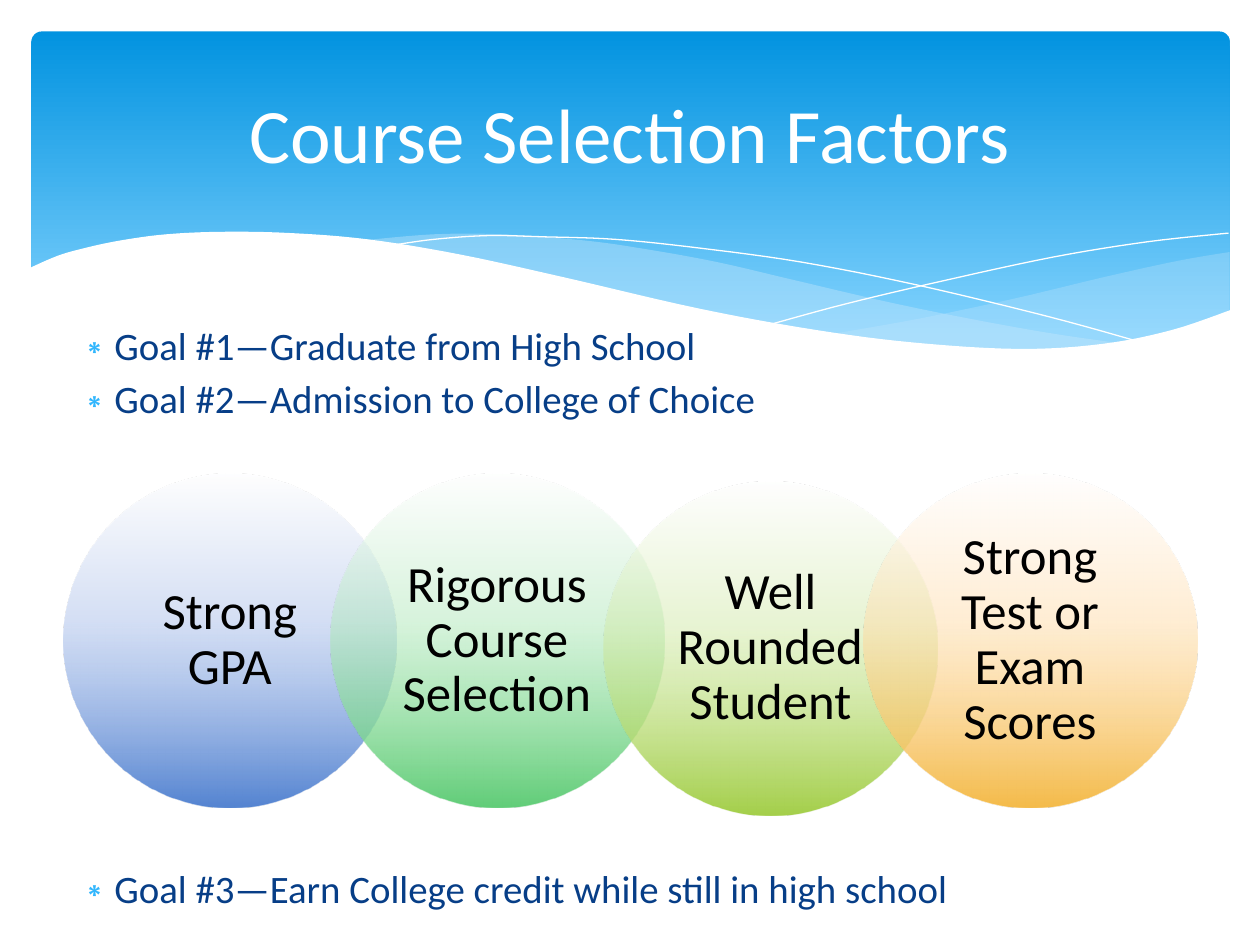
from lxml import etree
from pptx import Presentation
from pptx.dml.color import RGBColor
from pptx.enum.shapes import MSO_SHAPE
from pptx.enum.text import MSO_ANCHOR, MSO_AUTO_SIZE, PP_ALIGN
from pptx.oxml.ns import qn
from pptx.util import Pt

PX = 9144
FONT = "Calibri"
MIDDLE, TOP = MSO_ANCHOR.MIDDLE, MSO_ANCHOR.TOP
CENTER, LEFT = PP_ALIGN.CENTER, PP_ALIGN.LEFT
NO_AUTOFIT = MSO_AUTO_SIZE.NONE
ROUNDED, ELLIPSE = MSO_SHAPE.ROUNDED_RECTANGLE, MSO_SHAPE.OVAL

WHITE = RGBColor(0xFF, 0xFF, 0xFF)
BLACK = RGBColor(0x00, 0x00, 0x00)
NAVY = RGBColor(0x07, 0x3E, 0x87)
SKY = RGBColor(0x31, 0xB6, 0xFD)
HEADER_TOP = RGBColor(0x02, 0x93, 0xE0)
HEADER_BOTTOM = RGBColor(0x83, 0xD3, 0xFE)
MIST = RGBColor(0xC6, 0xE7, 0xFC)
PALE_BLUE, BLUE = RGBColor(0xAB, 0xC0, 0xEB), RGBColor(0x54, 0x84, 0xD1)
PALE_GREEN, GREEN = RGBColor(0xB1, 0xE9, 0xBB), RGBColor(0x61, 0xCD, 0x78)
PALE_LIME, LIME = RGBColor(0xD1, 0xEA, 0xA7), RGBColor(0xA4, 0xCF, 0x4A)
PALE_AMBER, AMBER = RGBColor(0xFF, 0xDD, 0xAA), RGBColor(0xF4, 0xBB, 0x4A)

RIGHT_WAVE = [
    [(976, 200), (935, 207), (876, 220), (805, 237), (729, 253), (661, 265)],
    [(661, 265), (705, 271), (757, 276), (803, 278), (854, 276), (897, 270),
     (935, 262), (976, 247)],
]
LEFT_WAVE = [
    [(893, 273), (837, 265), (775, 254), (706, 240), (629, 222), (569, 208),
     (514, 198), (465, 191), (399, 186), (344, 186), (286, 191)],
    [(286, 191), (342, 199), (404, 211), (491, 232), (566, 248), (634, 261),
     (695, 270), (748, 276), (807, 278), (857, 277), (893, 273)],
]
FALLING_ARC = [
    [(309, 195), (344, 190), (387, 187), (433, 188), (489, 190), (556, 197),
     (636, 208), (727, 226), (831, 251), (907, 272)],
]
RISING_ARC = [
    [(613, 257), (672, 241), (748, 223), (836, 204), (910, 192), (975, 185)],
]
PAGE_WAVE = [
    [(977, 246), (930, 262), (875, 273), (809, 277), (726, 272), (648, 262),
     (555, 245), (447, 220), (365, 202), (292, 190), (230, 185), (177, 184),
     (132, 186), (95, 191), (67, 197), (46, 203), (23, 213)],
    [(23, 329), (977, 329)],
]
GOALS = [
    ("Goal #1—Graduate from High School", 4),
    ("Goal #2—Admission to College of Choice", 4),
    ("Goal #3—Earn College credit while still in high school", 253),
]
FACTORS = [
    ("Strong GPA", 50, 376, PALE_BLUE, BLUE),
    ("Rigorous Course Selection", 262, 376, PALE_GREEN, GREEN),
    ("Well Rounded Student", 479, 382, PALE_LIME, LIME),
    ("Strong Test or Exam Scores", 685, 376, PALE_AMBER, AMBER),
]
CIRCLE, LABEL = 265, 187


def smooth(knots, steps=6):
    padded = [knots[0], *knots, knots[-1]]
    curve = [knots[0]]
    for a, b, c, d in zip(padded, padded[1:], padded[2:], padded[3:]):
        for step in range(1, steps + 1):
            t = step / steps
            curve.append(tuple(
                (2 * q + (r - p) * t + (2 * p - 5 * q + 4 * r - s) * t**2
                 + (3 * q - p - 3 * r + s) * t**3) / 2
                for p, q, r, s in zip(a, b, c, d)))
    return curve


def write_text(paragraph, text, size=22.2, color=NAVY, align=LEFT, before=0, spacing=1):
    run = paragraph.add_run()
    run.text = text
    run.font.name = FONT
    run.font.size = Pt(size)
    run.font.color.rgb = color
    paragraph.alignment = align
    paragraph.space_before = Pt(before)
    paragraph.line_spacing = spacing


def color_node(parent, color, alpha=100):
    node = etree.SubElement(parent, qn("a:srgbClr"), val=str(color))
    if alpha < 100:
        etree.SubElement(node, qn("a:alpha"), val=str(alpha * 1000))


class SlideBuilder:
    def __init__(self, slide):
        self.slide = slide
        self.shapes = slide.shapes

    def gradient_shape(self, kind, box, stops):
        shape = self.shapes.add_shape(kind, *(n * PX for n in box))
        shape.shadow.inherit = False
        shape.line.fill.background()
        shape.fill.gradient()
        shape.fill.gradient_angle = 270
        stop_list = shape._element.spPr.find(".//" + qn("a:gsLst"))
        for stop in list(stop_list):
            stop_list.remove(stop)
        for position, color, alpha in stops:
            stop = etree.SubElement(stop_list, qn("a:gs"), pos=str(position * 1000))
            color_node(stop, color, alpha)
        return shape

    def wave(self, edges, color=None, alpha=100):
        outline = [(round(x * PX), round(y * PX))
                   for edge in edges for x, y in smooth(edge)]
        builder = self.shapes.build_freeform(*outline[0])
        builder.add_line_segments(outline[1:], close=color is not None)
        wave = builder.convert_to_shape()
        wave.shadow.inherit = False
        if color is None:
            wave.fill.background()
            wave.line.color.rgb = WHITE
            wave.line.width = Pt(0)
            return
        wave.line.fill.background()
        wave.fill.solid()
        wave.fill.fore_color.rgb = color
        solid = wave._element.spPr.find(qn("a:solidFill"))
        solid.remove(solid[0])
        color_node(solid, color, alpha)

    def place(self, holder, box, anchor):
        holder.left, holder.top, holder.width, holder.height = (n * PX for n in box)
        frame = holder.text_frame
        frame.word_wrap = True
        frame.auto_size = NO_AUTOFIT
        frame.vertical_anchor = anchor
        self.shapes._spTree.append(holder._element)
        return frame

    def title(self, text, box):
        frame = self.place(self.shapes.title, box, MIDDLE)
        write_text(frame.paragraphs[0], text, size=44, color=WHITE, align=CENTER)

    def bullets(self, items, box):
        frame = self.place(self.slide.placeholders[1], box, TOP)
        for index, (text, before) in enumerate(items):
            paragraph = frame.add_paragraph() if index else frame.paragraphs[0]
            write_text(paragraph, text, before=before)
            properties = paragraph._p.get_or_add_pPr()
            properties.set("marL", str(30 * PX))
            properties.set("indent", str(-30 * PX))
            color_node(etree.SubElement(properties, qn("a:buClr")), SKY)
            etree.SubElement(properties, qn("a:buChar"), char="∗")

    def label(self, text, box):
        holder = self.shapes.add_textbox(0, 0, PX, PX)
        frame = self.place(holder, box, MIDDLE)
        frame.margin_left = frame.margin_right = 15 * PX
        frame.margin_top = frame.margin_bottom = 4 * PX
        write_text(frame.paragraphs[0], text, size=29, color=BLACK,
                   align=CENTER, spacing=0.9)

    def factor(self, text, left, top, pale, strong):
        self.gradient_shape(ELLIPSE, (left, top, CIRCLE, CIRCLE),
                            [(0, WHITE, 50), (44, pale, 50), (100, strong, 100)])
        inset = (CIRCLE - LABEL) // 2
        self.label(text, (left + inset, top + inset, LABEL, LABEL))


def main():
    deck = Presentation()
    deck.slide_width, deck.slide_height = 1000 * PX, 750 * PX
    builder = SlideBuilder(deck.slides.add_slide(deck.slide_layouts[1]))

    header = builder.gradient_shape(ROUNDED, (25, 25, 951, 270),
                                    [(0, HEADER_TOP, 100), (90, HEADER_BOTTOM, 100)])
    header.adjustments[0] = 0.03
    builder.wave(RIGHT_WAVE, MIST, 29)
    builder.wave(LEFT_WAVE, MIST, 40)
    builder.wave(FALLING_ARC)
    builder.wave(RISING_ARC)
    builder.wave(PAGE_WAVE, WHITE)

    builder.bullets(GOALS, (50, 250, 917, 467))
    builder.title("Course Selection Factors", (50, 37, 900, 137))
    for factor in FACTORS:
        builder.factor(*factor)
    deck.save("out.pptx")


if __name__ == "__main__":
    main()
